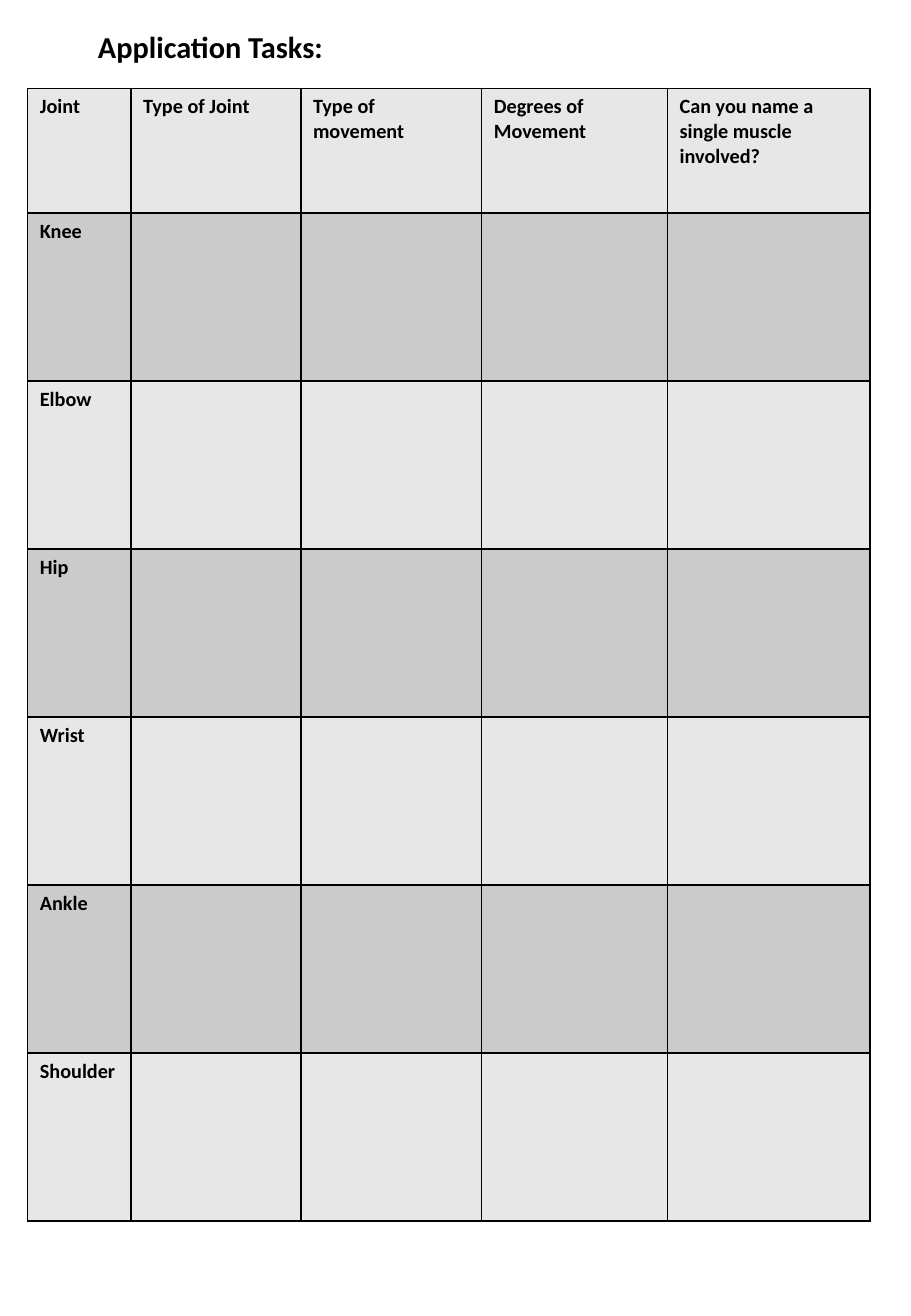
from dataclasses import dataclass

from lxml.etree import SubElement
from pptx import Presentation
from pptx.dml.color import RGBColor
from pptx.enum.text import MSO_AUTO_SIZE
from pptx.oxml.ns import qn
from pptx.util import Cm, Pt


@dataclass(frozen=True)
class Theme:
    font: str = "Calibri"
    ink: str = "000000"
    bands: tuple = ("E7E7E7", "CBCBCB")
    heading_size: int = 18
    table_size: int = 12
    border_width: int = 1


THEME = Theme()
QUESTIONS = ["Joint", "Type of Joint", "Type of movement", "Degrees of Movement",
             "Can you name a single muscle involved?"]
JOINTS = ["Knee", "Elbow", "Hip", "Wrist", "Ankle", "Shoulder"]
COLUMN_SHARES = [0.85, 1.4, 1.49, 1.53, 1.67]
HEADER_HEIGHT = Cm(2.6)


def add_bold_run(paragraph, wording, size):
    run = paragraph.add_run()
    run.text = wording
    run.font.name = THEME.font
    run.font.size = Pt(size)
    run.font.bold = True
    run.font.color.rgb = RGBColor.from_string(THEME.ink)


def add_borders(cell):
    properties = cell._tc.get_or_add_tcPr()
    for position, side in enumerate(("lnL", "lnR", "lnT", "lnB")):
        border = SubElement(properties, qn(f"a:{side}"), w=str(Pt(THEME.border_width)))
        ink = SubElement(border, qn("a:solidFill"))
        SubElement(ink, qn("a:srgbClr"), val=THEME.ink)
        properties.insert(position, border)


def add_heading(slide, left, top, width, height):
    heading = slide.shapes.add_textbox(left, top, width, height).text_frame
    heading.word_wrap = False
    heading.auto_size = MSO_AUTO_SIZE.SHAPE_TO_FIT_TEXT
    add_bold_run(heading.paragraphs[0], "Application Tasks:", THEME.heading_size)


def add_joint_table(slide, left, top, width, height):
    rows = [QUESTIONS] + [[joint] + [""] * (len(QUESTIONS) - 1) for joint in JOINTS]
    table = slide.shapes.add_table(len(rows), len(QUESTIONS), left, top, width, height).table
    for column, share in zip(table.columns, COLUMN_SHARES):
        column.width = int(width * share / sum(COLUMN_SHARES))
    joint_height = (height - HEADER_HEIGHT) // len(JOINTS)
    for index, wordings in enumerate(rows):
        table.rows[index].height = joint_height if index else HEADER_HEIGHT
        for cell, wording in zip(table.rows[index].cells, wordings):
            cell.fill.solid()
            cell.fill.fore_color.rgb = RGBColor.from_string(THEME.bands[index % 2])
            add_borders(cell)
            if wording:
                add_bold_run(cell.text_frame.paragraphs[0], wording, THEME.table_size)


def main():
    presentation = Presentation()
    presentation.slide_width = Cm(19.05)
    presentation.slide_height = Cm(27.51)
    slide = presentation.slides.add_slide(presentation.slide_layouts[6])
    add_heading(slide, Cm(1.8), Cm(0.46), Cm(5.26), Cm(1.02))
    add_joint_table(slide, Cm(0.58), Cm(1.85), Cm(17.62), Cm(23.68))
    presentation.save("out.pptx")


if __name__ == "__main__":
    main()
